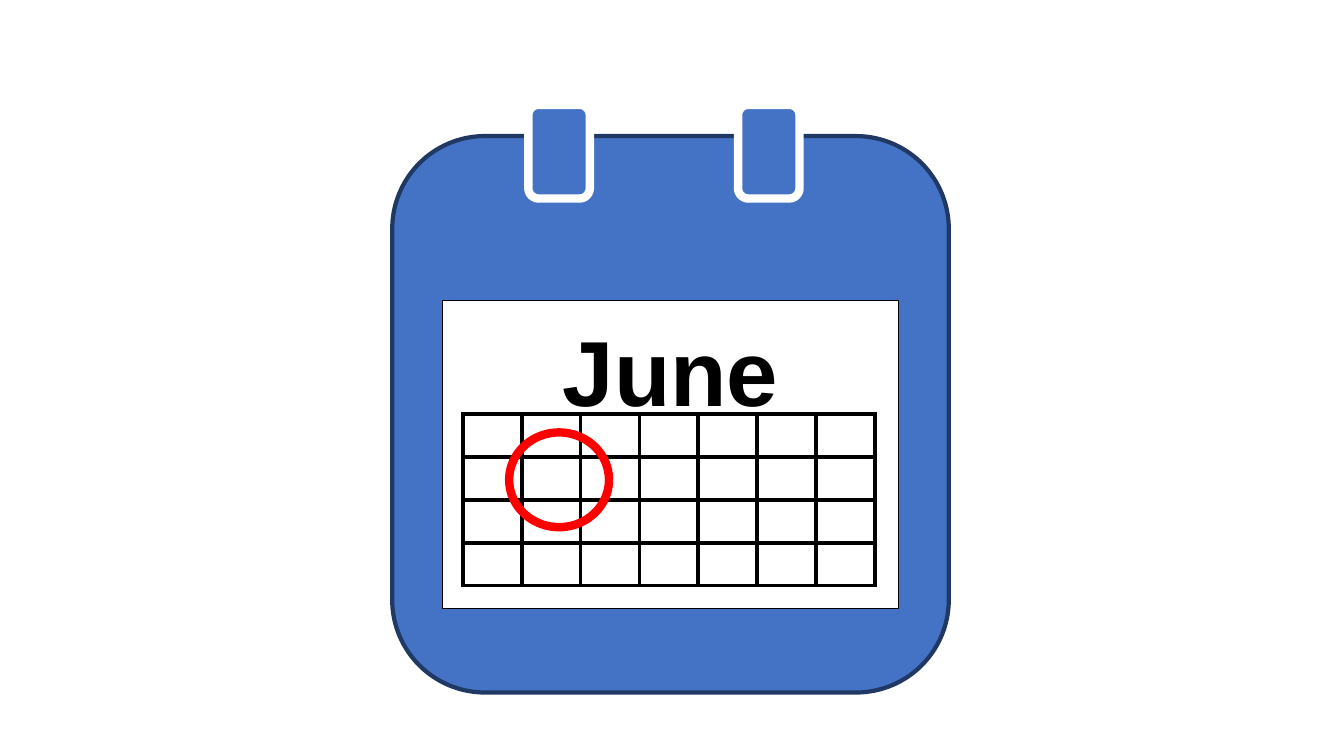
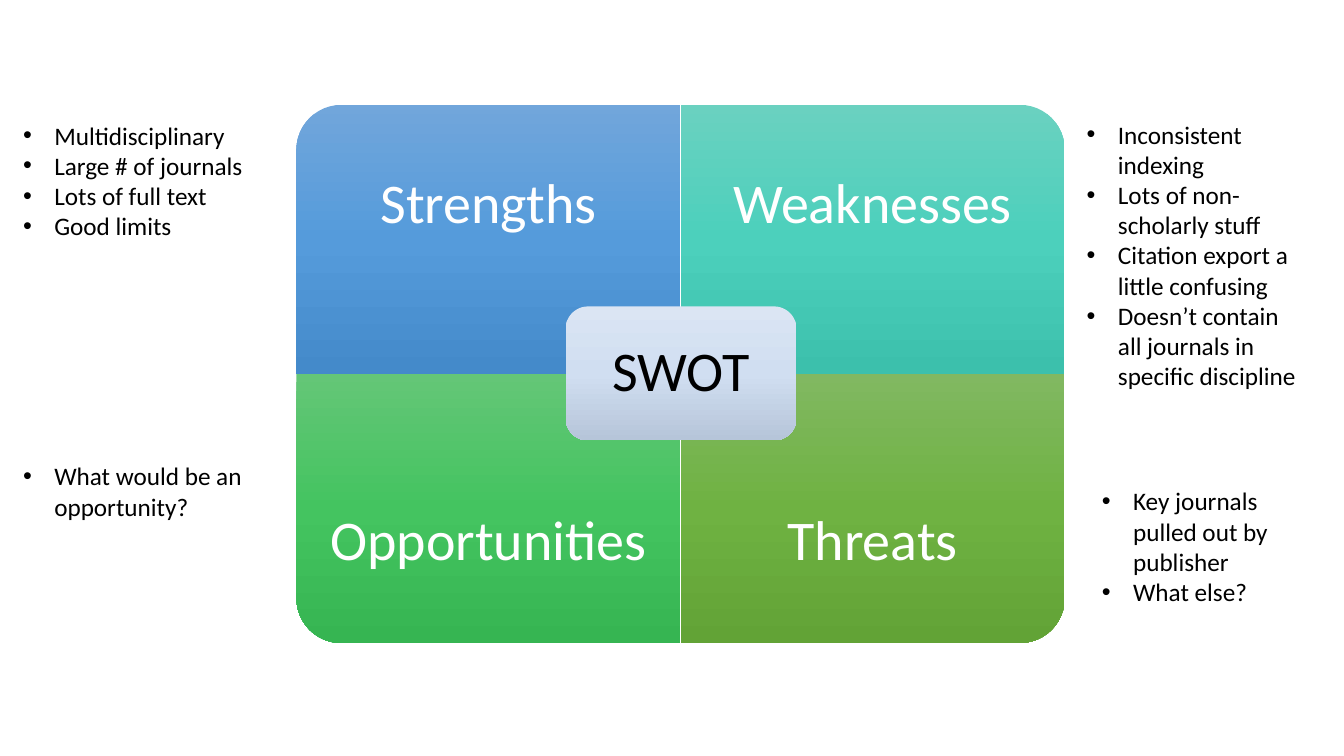
from lxml import etree
from pptx import Presentation
from pptx.dml.color import RGBColor
from pptx.enum.shapes import MSO_SHAPE as Shape
from pptx.enum.text import MSO_ANCHOR as Anchor, PP_ALIGN as Align
from pptx.oxml import parse_xml
from pptx.oxml.ns import nsdecls, qn
from pptx.util import Inches, Pt

BLUE, NAVY, RED, WHITE, BLACK = "4472C4", "203864", "FF0000", "FFFFFF", "000000"
MONTH = "June"
WEEKS, DAYS = 4, 7
CELL_WIDTH, CELL_HEIGHT = 0.584, 0.425
TAB_LEFTS = (5.24, 7.32)

GRID_LEFT, GRID_TOP = 2.94, 1.04
QUAD_WIDTH, QUAD_HEIGHT, LABEL_HEIGHT = 3.81, 2.67, 2
QUADRANTS = [
    ("Strengths", 0, 0, 270, ("71A6DB", "559BDB", "448ACA")),
    ("Weaknesses", 0, 1, 0, ("6AD1C0", "4CD0BC", "3CC0AC")),
    ("Opportunities", 1, 0, 180, ("64C677", "44C460", "36B552")),
    ("Threats", 1, 1, 90, ("81B861", "6FB242", "62A336")),
]
CENTER = ("SWOT", (5.61, 3.04, 2.29, 1.33), ("DBE5F3", "D0DEF1", "B6C5D9"))
NOTES = [
    ((0.13, 1.14, 2.41, 1.31),
     ["Multidisciplinary", "Large # of journals", "Lots of full text", "Good limits"]),
    ((10.68, 1.13, 2.34, 2.83),
     ["Inconsistent indexing", "Lots of non-scholarly stuff",
      "Citation export a little confusing",
      "Doesn’t contain all journals in specific discipline"]),
    ((10.83, 4.77, 2.18, 1.31), ["Key journals pulled out by publisher", "What else?"]),
    ((0.13, 4.52, 2.41, 0.71), ["What would be an opportunity?"]),
]


def color(value):
    return RGBColor.from_string(value)


def add_shape(page, kind, area, fill=None, line=None, width=0):
    shape = page.shapes.add_shape(kind, *map(Inches, area))
    shape.shadow.inherit = False
    if fill:
        shape.fill.solid()
        shape.fill.fore_color.rgb = color(fill)
    else:
        shape.fill.background()
    if line:
        shape.line.color.rgb = color(line)
        shape.line.width = Pt(width)
    else:
        shape.line.fill.background()
    return shape


def shade(shape, colors):
    stops = "".join(
        f'<a:gs pos="{index * 50000}"><a:srgbClr val="{value}"/></a:gs>'
        for index, value in enumerate(colors))
    gradient = parse_xml(
        f'<a:gradFill {nsdecls("a")} rotWithShape="0"><a:gsLst>{stops}</a:gsLst>'
        '<a:lin ang="5400000" scaled="0"/></a:gradFill>')
    properties = shape.fill._xPr
    properties.replace(properties.find(qn("a:noFill")), gradient)


def style(para, size, ink, font="Calibri", bold=False):
    for span in para.runs:
        span.font.size = Pt(size)
        span.font.name = font
        span.font.bold = bold
        span.font.color.rgb = color(ink)


def set_label(shape, text, ink):
    frame = shape.text_frame
    frame.text = text
    frame.word_wrap = True
    frame.vertical_anchor = Anchor.MIDDLE
    para = frame.paragraphs[0]
    para.alignment = Align.CENTER
    para.line_spacing = 0.9
    style(para, 40, ink)


def add_notes(page, area, items):
    frame = page.shapes.add_textbox(*map(Inches, area)).text_frame
    frame.word_wrap = True
    frame.text = "\n".join(items)
    for para in frame.paragraphs:
        properties = para._p.get_or_add_pPr()
        properties.set("marL", str(Inches(0.31)))
        properties.set("indent", str(-Inches(0.31)))
        etree.SubElement(properties, qn("a:buFont")).set("typeface", "Arial")
        etree.SubElement(properties, qn("a:buChar")).set("char", "•")
        style(para, 18, BLACK)


def add_borders(cell):
    properties = cell._tc.get_or_add_tcPr()
    for side in "LRTB":
        properties.append(parse_xml(
            f'<a:ln{side} {nsdecls("a")} w="{Pt(3)}"><a:solidFill>'
            f'<a:srgbClr val="{BLACK}"/></a:solidFill></a:ln{side}>'))
    cell.fill.background()


def build_calendar(page):
    add_shape(page, Shape.ROUNDED_RECTANGLE, (3.89, 1.35, 5.52, 5.52), BLUE, NAVY, 3)
    sheet = add_shape(page, Shape.RECTANGLE, (4.39, 2.98, 4.52, 3.06), WHITE, BLACK, 1)
    frame = sheet.text_frame
    frame.text = MONTH
    frame.vertical_anchor = Anchor.TOP
    frame.margin_top = Inches(0.14)
    frame.paragraphs[0].alignment = Align.CENTER
    style(frame.paragraphs[0], 66, BLACK, "Arial", True)
    for left in TAB_LEFTS:
        add_shape(page, Shape.ROUNDED_RECTANGLE, (left, 1.04, 0.61, 0.93), BLUE, WHITE, 6)
    area = (4.59, 4.11, DAYS * CELL_WIDTH, WEEKS * CELL_HEIGHT)
    table = page.shapes.add_table(WEEKS, DAYS, *map(Inches, area)).table
    table.first_row = table.horz_banding = False
    for cell in table.iter_cells():
        add_borders(cell)
    add_shape(page, Shape.OVAL, (5.05, 4.29, 0.99, 0.94), None, RED, 6)


def build_swot(page):
    for text, row, column, angle, colors in QUADRANTS:
        left = GRID_LEFT + column * QUAD_WIDTH
        top = GRID_TOP + row * QUAD_HEIGHT
        width, height = QUAD_WIDTH, QUAD_HEIGHT
        if angle % 180:
            width, height = height, width
        area = (left + (QUAD_WIDTH - width) / 2, top + (QUAD_HEIGHT - height) / 2, width, height)
        quadrant = add_shape(page, Shape.ROUND_1_RECTANGLE, area)
        quadrant.rotation = angle
        shade(quadrant, colors)
        label_top = top + row * (QUAD_HEIGHT - LABEL_HEIGHT)
        label_area = (left, label_top, QUAD_WIDTH, LABEL_HEIGHT)
        set_label(page.shapes.add_textbox(*map(Inches, label_area)), text, WHITE)
    text, area, colors = CENTER
    center = add_shape(page, Shape.ROUNDED_RECTANGLE, area)
    shade(center, colors)
    set_label(center, text, BLACK)
    for area, items in NOTES:
        add_notes(page, area, items)


def main():
    deck = Presentation()
    deck.slide_width, deck.slide_height = Inches(13.33), Inches(7.5)
    for build in (build_calendar, build_swot):
        build(deck.slides.add_slide(deck.slide_layouts[6]))
    deck.save("out.pptx")


if __name__ == "__main__":
    main()
